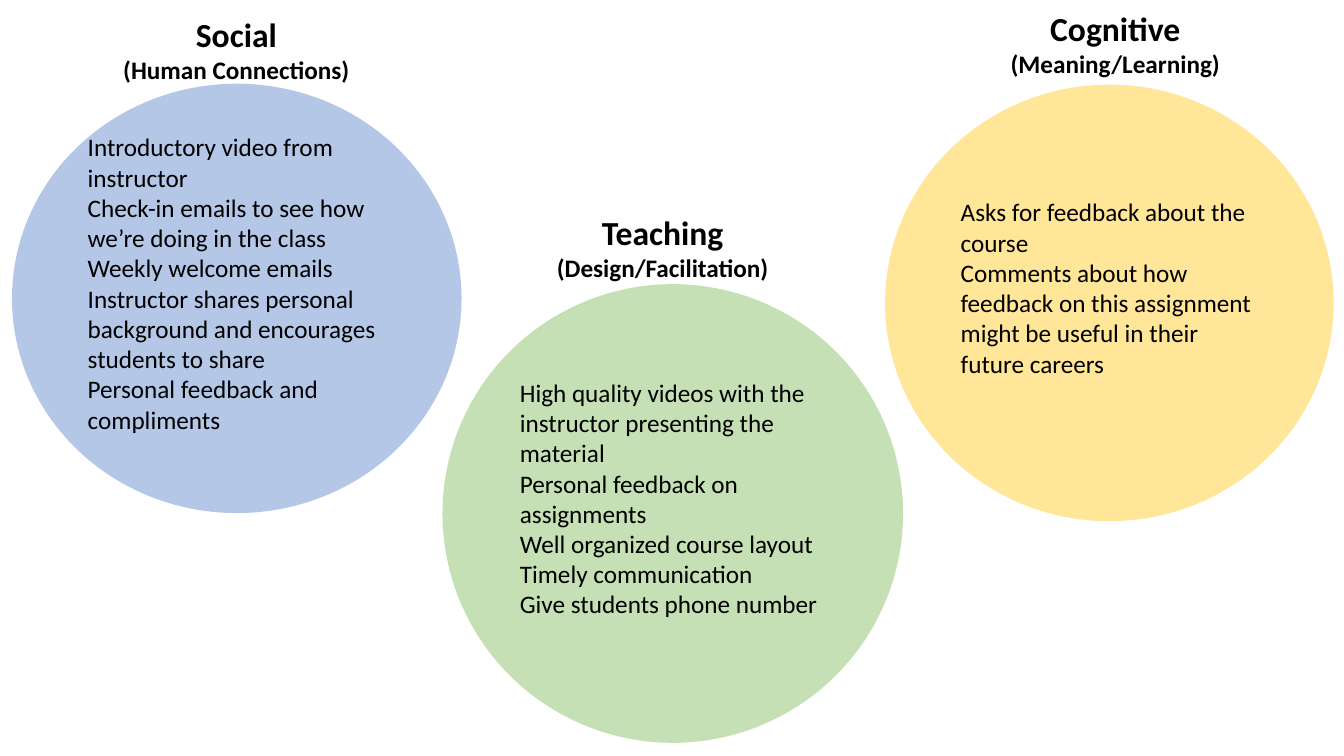
from pptx import Presentation
from pptx import util as u
from pptx.dml import color
from pptx.enum import shapes, text

FONT = "Calibri"
COLORS = {
    "social": "B4C7E7",
    "cognitive": "FFE699",
    "teaching": "C5E0B4",
    "ink": "000000",
}
BODY_SIZE = 18
NAME_SIZE = 24
HEADING_HEIGHT = 58.3
CIRCLE_BOTTOM_INSET = 25.6

PRESENCES = [
    {
        "key": "social",
        "circle": (8.6, 59.8, 321.1, 306.7),
        "heading": (67.7, 6.5, 202.3),
        "name": "Social",
        "meaning": "(Human Connections)",
        "examples": [
            "Introductory video from instructor",
            "Check-in emails to see how we’re doing in the class",
            "Weekly welcome emails",
            "Instructor shares personal background and encourages students to share",
            "Personal feedback and compliments",
        ],
    },
    {
        "key": "cognitive",
        "circle": (632.2, 60.5, 320.4, 311.8),
        "heading": (713.5, 2.2, 166.3),
        "name": "Cognitive",
        "meaning": "(Meaning/Learning)",
        "examples": [
            "Asks for feedback about the course",
            "Comments about how feedback on this assignment might be useful "
            "in their future careers",
        ],
    },
    {
        "key": "teaching",
        "circle": (316.1, 203, 329, 327.6),
        "heading": (379.4, 147.6, 187.9),
        "name": "Teaching",
        "meaning": "(Design/Facilitation)",
        "examples": [
            "High quality videos with the instructor presenting the material",
            "Personal feedback on assignments",
            "Well organized course layout",
            "Timely communication",
            "Give students phone number",
        ],
    },
]


def rgb(key):
    return color.RGBColor.from_string(COLORS[key])


def format_line(line, size, align, bold=False):
    line.alignment = align
    for run in line.runs:
        run.font.name = FONT
        run.font.size = u.Pt(size)
        run.font.bold = bold
        run.font.color.rgb = rgb("ink")


def add_circle(slide, presence):
    circle = slide.shapes.add_shape(
        shapes.MSO_SHAPE.OVAL, *map(u.Pt, presence["circle"])
    )
    circle.shadow.inherit = False
    circle.fill.solid()
    circle.fill.fore_color.rgb = rgb(presence["key"])
    circle.line.fill.background()
    examples = circle.text_frame
    examples.word_wrap = True
    examples.vertical_anchor = text.MSO_ANCHOR.MIDDLE
    examples.margin_bottom = u.Pt(CIRCLE_BOTTOM_INSET)
    examples.text = "\n".join(presence["examples"])
    for example in examples.paragraphs:
        format_line(example, BODY_SIZE, text.PP_ALIGN.LEFT)


def add_heading(slide, presence):
    left, top, width = presence["heading"]
    heading = slide.shapes.add_textbox(
        u.Pt(left), u.Pt(top), u.Pt(width), u.Pt(HEADING_HEIGHT)
    ).text_frame
    heading.word_wrap = True
    heading.auto_size = text.MSO_AUTO_SIZE.SHAPE_TO_FIT_TEXT
    heading.text = presence["name"] + "\n" + presence["meaning"]
    for line, size in zip(heading.paragraphs, (NAME_SIZE, BODY_SIZE)):
        format_line(line, size, text.PP_ALIGN.CENTER, bold=True)


def main():
    deck = Presentation()
    deck.slide_width = u.Pt(960)
    deck.slide_height = u.Pt(540)
    slide = deck.slides.add_slide(deck.slide_layouts[6])
    for presence in PRESENCES:
        add_circle(slide, presence)
    for presence in PRESENCES:
        add_heading(slide, presence)
    deck.save("out.pptx")


if __name__ == "__main__":
    main()
